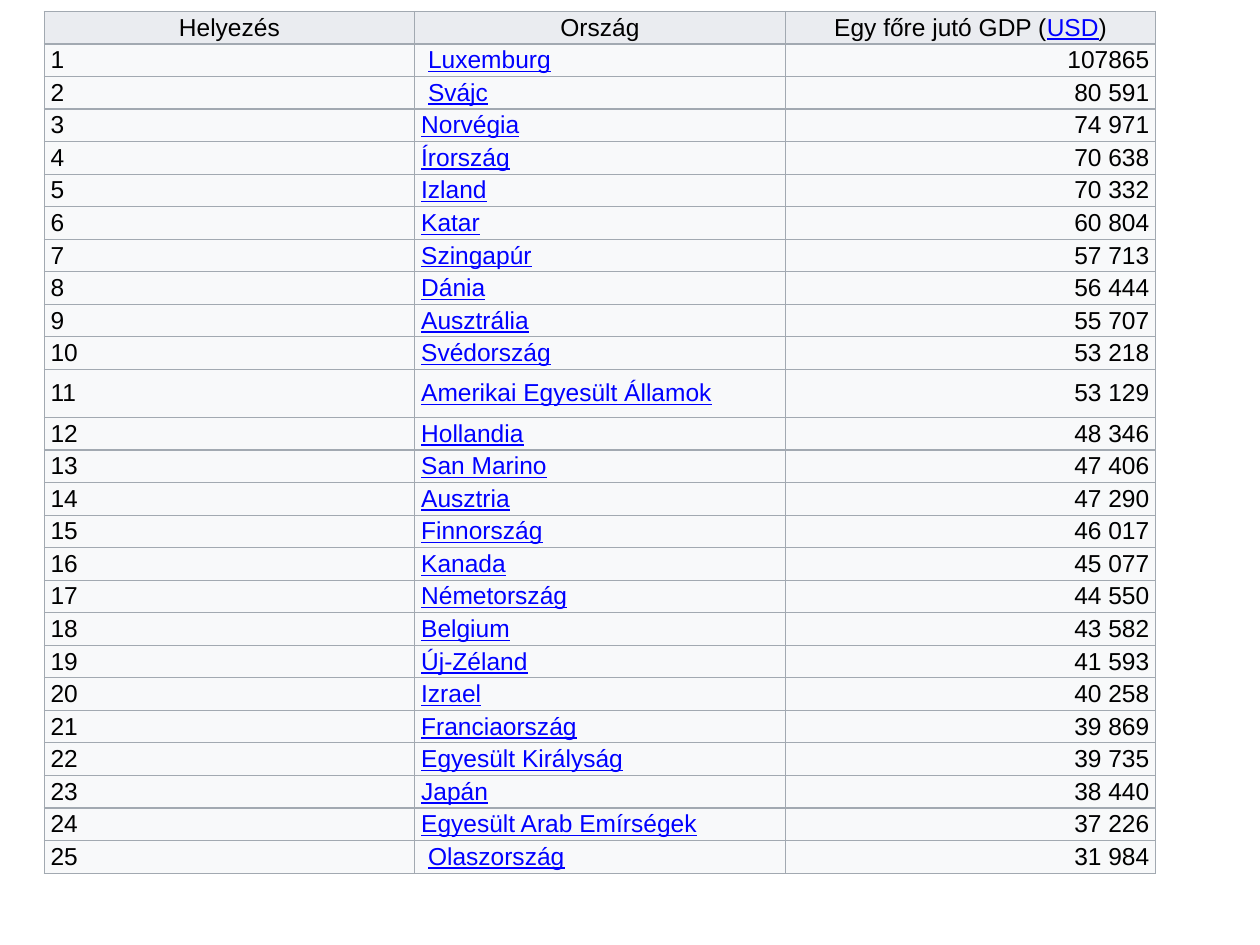
from typing import NamedTuple

from lxml import etree
from pptx import Presentation, util as u
from pptx.dml.color import RGBColor
from pptx.enum import text
from pptx.oxml.ns import qn

BLACK, LINK, BORDER = "000000", "0000FF", "A2A9B1"
HEADER_FILL, BODY_FILL = "EAECF0", "F8F9FA"
COLUMN_WIDTH, ROW_HEIGHT, TALL_ROW_HEIGHT = u.Cm(7.47), u.Cm(0.56), u.Cm(0.97)
TALL_RANK = 11
NBSP = chr(160)


class Run(NamedTuple):
    text: str
    link: bool = False


class Country(NamedTuple):
    name: str
    gdp: str
    prefix: str = ""


HEADERS = [
    [Run("Helyezés")],
    [Run("Ország")],
    [Run("Egy főre jutó GDP ("), Run("USD", True), Run(")")],
]
COUNTRIES = [
    Country("Luxemburg", "107865", NBSP),
    Country("Svájc", "80 591", NBSP),
    Country("Norvégia", "74 971"),
    Country("Írország", "70 638"),
    Country("Izland", "70 332"),
    Country("Katar", "60 804"),
    Country("Szingapúr", "57 713"),
    Country("Dánia", "56 444"),
    Country("Ausztrália", "55 707"),
    Country("Svédország", "53 218"),
    Country("Amerikai Egyesült Államok", "53 129"),
    Country("Hollandia", "48 346"),
    Country("San Marino", "47 406"),
    Country("Ausztria", "47 290"),
    Country("Finnország", "46 017"),
    Country("Kanada", "45 077"),
    Country("Németország", "44 550"),
    Country("Belgium", "43 582"),
    Country("Új-Zéland", "41 593"),
    Country("Izrael", "40 258"),
    Country("Franciaország", "39 869"),
    Country("Egyesült Királyság", "39 735"),
    Country("Japán", "38 440"),
    Country("Egyesült Arab Emírségek", "37 226"),
    Country("Olaszország", "31 984", NBSP),
]


def rgb(color: str) -> RGBColor:
    return RGBColor.from_string(color)


def add_borders(cell) -> None:
    """Draw all four cell edges; lines must precede the fill in tcPr."""
    tc_pr = cell._tc.get_or_add_tcPr()
    for i, edge in enumerate(("lnL", "lnR", "lnT", "lnB")):
        ln = etree.Element(qn(f"a:{edge}"), w=str(u.Pt(0.75)))
        fill = etree.SubElement(ln, qn("a:solidFill"))
        etree.SubElement(fill, qn("a:srgbClr"), val=BORDER)
        tc_pr.insert(i, ln)


def fill_cell(cell, runs: list[Run], align: text.PP_ALIGN, fill: str) -> None:
    cell.fill.solid()
    cell.fill.fore_color.rgb = rgb(fill)
    add_borders(cell)
    cell.vertical_anchor = text.MSO_ANCHOR.MIDDLE
    cell.margin_left = cell.margin_right = u.Cm(0.13)
    cell.margin_top = cell.margin_bottom = u.Cm(0.05)
    p = cell.text_frame.paragraphs[0]
    p.alignment = align
    for run in runs:
        r = p.add_run()
        r.text = run.text
        r.font.name, r.font.size = "Arial", u.Pt(14)
        r.font.bold = False
        r.font.underline = run.link
        r.font.color.rgb = rgb(LINK if run.link else BLACK)


def country_runs(rank: int, country: Country) -> list[list[Run]]:
    prefix = [Run(country.prefix)] if country.prefix else []
    return [[Run(str(rank))], prefix + [Run(country.name, True)], [Run(country.gdp)]]


def add_ranking(slide) -> None:
    frame = slide.shapes.add_table(
        len(COUNTRIES) + 1, len(HEADERS), u.Cm(0.89), u.Cm(0.23),
        COLUMN_WIDTH * len(HEADERS), u.Cm(18.82))
    table = frame.table
    table.horz_banding = False
    for column in table.columns:
        column.width = COLUMN_WIDTH
    for rank, row in enumerate(table.rows):
        row.height = TALL_ROW_HEIGHT if rank == TALL_RANK else ROW_HEIGHT

    for cell, runs in zip(table.rows[0].cells, HEADERS):
        fill_cell(cell, runs, text.PP_ALIGN.CENTER, HEADER_FILL)
    aligns = (text.PP_ALIGN.LEFT, text.PP_ALIGN.LEFT, text.PP_ALIGN.RIGHT)
    for rank, country in enumerate(COUNTRIES, 1):
        cells = table.rows[rank].cells
        for cell, runs, align in zip(cells, country_runs(rank, country), aligns):
            fill_cell(cell, runs, align, BODY_FILL)


def main() -> None:
    prs = Presentation()
    prs.slide_width, prs.slide_height = u.Cm(25.4), u.Cm(19.05)
    add_ranking(prs.slides.add_slide(prs.slide_layouts[6]))
    prs.save("out.pptx")


if __name__ == "__main__":
    main()
